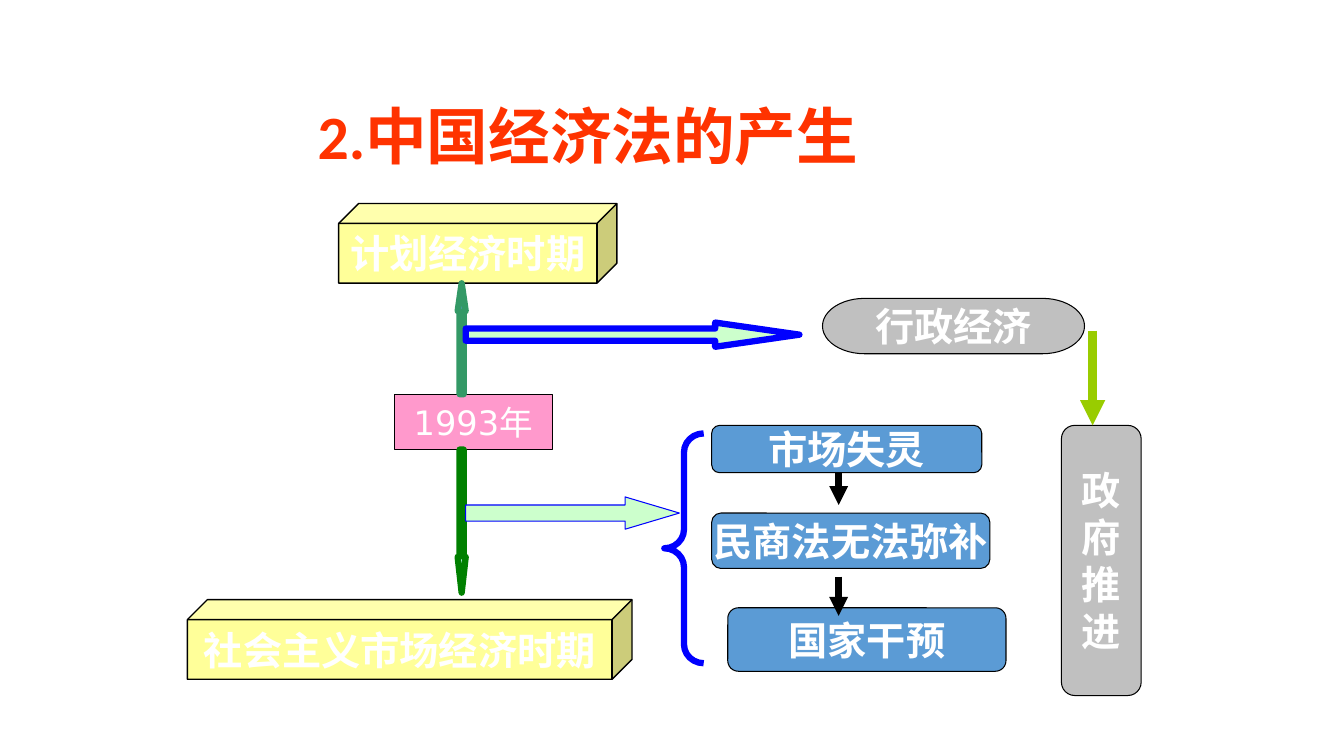
from dataclasses import dataclass

from lxml.etree import SubElement
from pptx import Presentation
from pptx.dml.color import RGBColor
from pptx.enum.shapes import MSO_CONNECTOR as Connector, MSO_SHAPE as Shape
from pptx.enum.text import MSO_ANCHOR as Anchor, MSO_AUTO_SIZE as AutoSize, PP_ALIGN as Align
from pptx.oxml.ns import qn
from pptx.util import Inches, Pt

WIDTH, HEIGHT = Inches(13.33), Inches(7.5)


@dataclass(frozen=True)
class Theme:
    title: str = "FF3300"
    text: str = "FFFFFF"
    outline: str = "000000"
    period: str = "FFFF99"
    year: str = "FF99CC"
    government: str = "C0C0C0"
    market: str = "5B9BD5"
    past: str = "339966"
    future: str = "008000"
    future_fill: str = "CCFFFF"
    link: str = "0000FF"
    link_fill: str = "CCFFCC"
    push: str = "99CC00"
    title_size: int = 44
    label_size: int = 28
    year_size: int = 24
    thin: float = 0.75
    edge: float = 1
    thick: float = 4.5
    heavy: float = 6


THEME = Theme()


def across(percent):
    return round(WIDTH * percent / 100)


def down(percent):
    return round(HEIGHT * percent / 100)


def place(box):
    """Turn left, top, width and height in percent of the slide into lengths."""
    left, top, width, height = box
    return across(left), down(top), across(width), down(height)


def apply_format(target, values):
    for name, value in values.items():
        setattr(target, name, value)


def set_line(line, color, width):
    line.color.rgb = RGBColor.from_string(color)
    line.width = Pt(width)


def write(frame, lines, font, size, color, align, bold=True, spacing=None, wrap=False):
    apply_format(frame, {"auto_size": AutoSize.NONE, "word_wrap": wrap,
                         "vertical_anchor": Anchor.MIDDLE})
    for index, line in enumerate(lines):
        paragraph = frame.add_paragraph() if index else frame.paragraphs[0]
        apply_format(paragraph, {"alignment": align, "line_spacing": spacing})
        run = paragraph.add_run()
        run.text = line
        apply_format(run.font, {"name": font, "size": Pt(size), "bold": bold})
        run.font.color.rgb = RGBColor.from_string(color)


def add_title(slide, text, box):
    title = slide.shapes.title
    apply_format(title, dict(zip(("left", "top", "width", "height"), place(box))))
    write(title.text_frame, [text], "Calibri", THEME.title_size, THEME.title,
          Align.LEFT, spacing=0.9, wrap=True)


def add_figure(slide, kind, box, fill, color=THEME.outline, width=THEME.thin, adjustments=()):
    shape = slide.shapes.add_shape(kind, *place(box))
    shape.shadow.inherit = False
    for index, value in enumerate(adjustments):
        shape.adjustments[index] = value
    if fill:
        shape.fill.solid()
        shape.fill.fore_color.rgb = RGBColor.from_string(fill)
    else:
        shape.fill.background()
    set_line(shape.line, color, width)
    return shape


def add_label(slide, kind, box, fill, lines, font="Arial", size=THEME.label_size,
              bold=True, width=THEME.thin):
    shape = add_figure(slide, kind, box, fill, width=width)
    write(shape.text_frame, lines, font, size, THEME.text, Align.CENTER, bold)


def add_down_arrow(slide, x, top, bottom, color, width):
    connector = slide.shapes.add_connector(
        Connector.STRAIGHT, across(x), down(top), across(x), down(bottom))
    set_line(connector.line, color, width)
    SubElement(connector.line._get_or_add_ln(), qn("a:tailEnd"), type="triangle")
    SubElement(connector._element.spPr, qn("a:effectLst"))


def add_timeline(slide):
    for text, box in (("计划经济时期", (25.2, 26.93, 20.7, 10.53)),
                      ("社会主义市场经济时期", (13.95, 79.33, 33.08, 10.53))):
        add_label(slide, Shape.CUBE, box, THEME.period, [text], "DejaVu Sans", width=THEME.edge)
    add_label(slide, Shape.RECTANGLE, (29.33, 52.13, 11.78, 7.33), THEME.year,
              ["1993年"], "DejaVu Sans", THEME.year_size, bold=False)
    add_figure(slide, Shape.UP_ARROW, (34.05, 37.47, 0.6, 14.67), THEME.market,
               THEME.past, THEME.thick, (0.5, 3.45))
    add_figure(slide, Shape.DOWN_ARROW, (34.05, 59.47, 0.6, 18.93), THEME.future_fill,
               THEME.future, THEME.thick, (0.5, 4.44))
    add_figure(slide, Shape.RIGHT_ARROW, (34.65, 42.67, 24.83, 3.2), THEME.link_fill,
               THEME.link, THEME.thick, (0.5, 3.48))
    add_figure(slide, Shape.RIGHT_ARROW, (34.65, 65.73, 15.9, 4.27), THEME.link_fill,
               THEME.link, THEME.thin, (0.5, 1.68))


def add_market_steps(slide):
    for text, box in (("市场失灵", (52.95, 56.27, 20.1, 6.27)),
                      ("民商法无法弥补", (52.95, 67.87, 20.7, 7.33)),
                      ("国家干预", (54.15, 80.4, 20.7, 8.4))):
        add_label(slide, Shape.ROUNDED_RECTANGLE, box, THEME.market, [text])
    add_figure(slide, Shape.LEFT_BRACE, (49.43, 57.33, 2.93, 30.4), None,
               THEME.link, THEME.thick, (0.48, 0.5))
    for top, bottom in ((62.53, 66.8), (76.27, 81.47)):
        add_down_arrow(slide, 62.4, top, bottom, THEME.outline, THEME.thick)


def add_government(slide):
    add_label(slide, Shape.FLOWCHART_TERMINATOR, (61.2, 39.47, 19.5, 7.33),
              THEME.government, ["行政经济"], "Cabin")
    add_label(slide, Shape.ROUNDED_RECTANGLE, (78.98, 56.27, 5.93, 35.73),
              THEME.government, "政府推进")
    add_down_arrow(slide, 81.3, 43.73, 56.27, THEME.push, THEME.heavy)


def main():
    presentation = Presentation()
    apply_format(presentation, {"slide_width": WIDTH, "slide_height": HEIGHT})
    slide = presentation.slides.add_slide(presentation.slide_layouts.get_by_name("Title Only"))
    add_title(slide, "2.中国经济法的产生", (22.88, 12.93, 52.95, 11.07))
    add_timeline(slide)
    add_market_steps(slide)
    add_government(slide)
    presentation.save("out.pptx")


if __name__ == "__main__":
    main()
